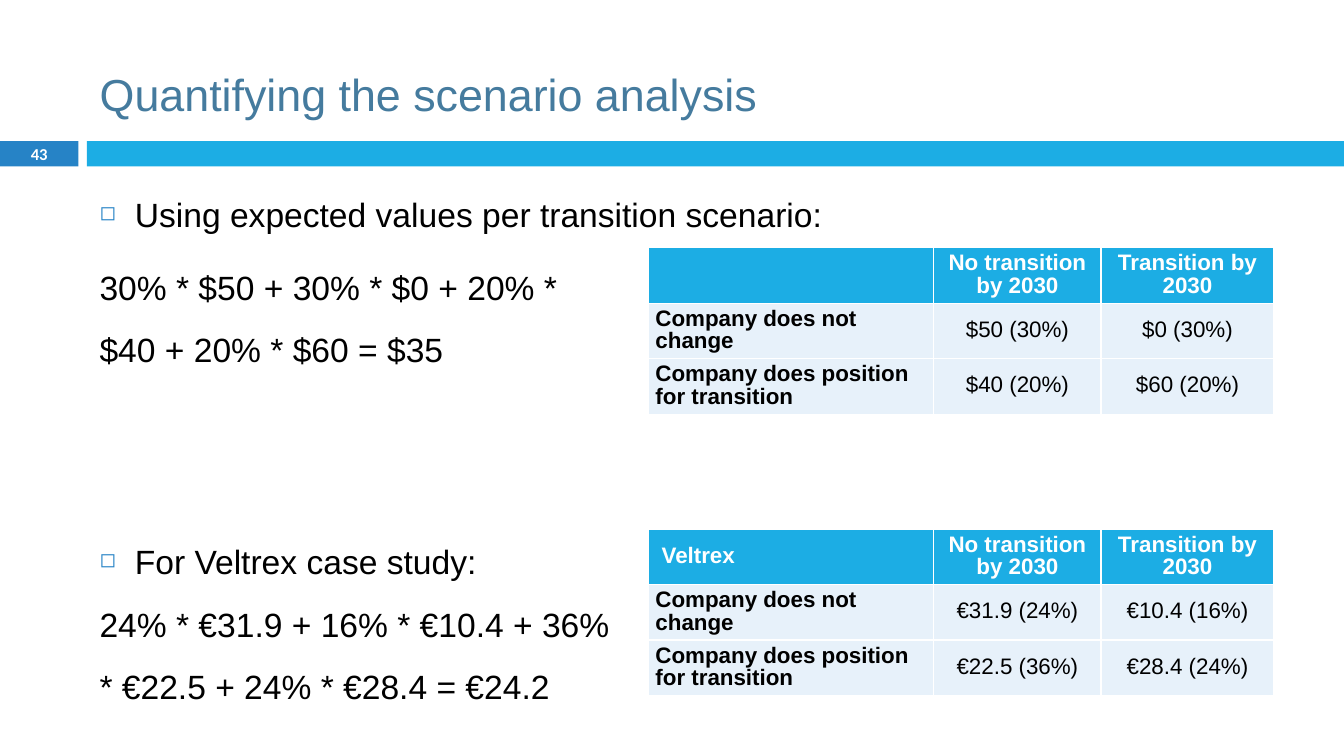
from pptx import Presentation
from pptx.util import Pt
from pptx.dml.color import RGBColor
from pptx.enum.shapes import MSO_SHAPE as Shape
from pptx.enum.text import PP_ALIGN as Align, MSO_ANCHOR as Anchor
from lxml.etree import SubElement

TITLE = "Quantifying the scenario analysis"
NUMBER = "43"
# lines, bulleted, space before
BODY = [
    (["Using expected values per transition scenario:"], True, 0),
    (["30% * $50 + 30% * $0 + 20% *", "$40 + 20% * $60 = $35"], False, 7),
    (["For Veltrex case study:"], True, 107),
    (["24% * €31.9 + 16% * €10.4 + 36%", "* €22.5 + 24% * €28.4 = €24.2"], False, 0),
]
HEADS = ["No transition by 2030", "Transition by 2030"]
SIDES = ["Company does not change", "Company does position for transition"]
# top, corner label, values
TABLES = [
    (177, "", [["$50 (30%)", "$0 (30%)"], ["$40 (20%)", "$60 (20%)"]]),
    (378, "Veltrex", [["€31.9 (24%)", "€10.4 (16%)"], ["€22.5 (36%)", "€28.4 (24%)"]]),
]
COLS = [204, 119.5, 123.5]
ROW = 39.6
SKY, BLUE, PALE = "1CADE4", "2683C6", "E7F1FA"
BLACK, WHITE = "000000", "FFFFFF"


def rgb(code):
    return RGBColor.from_string(code)


def add_run(para, text, size, color, bold=False, face="Arial"):
    run = para.add_run()
    run.text = text
    font = run.font
    font.name, font.size, font.bold = face, Pt(size), bold
    font.color.rgb = rgb(color)


def add_bar(left, width, color):
    bar = slide.shapes.add_shape(Shape.RECTANGLE, Pt(left), Pt(100.8), Pt(width), Pt(18))
    bar.shadow.inherit = False
    bar.fill.solid()
    bar.fill.fore_color.rgb = rgb(color)
    bar.line.fill.background()


def add_box(left, top, width, height):
    box = slide.shapes.add_textbox(Pt(left), Pt(top), Pt(width), Pt(height))
    box.text_frame.word_wrap = True
    return box.text_frame


def set_bullet(para):
    props = para._p.get_or_add_pPr()
    props.set("marL", str(Pt(25.2)))
    props.set("indent", str(-Pt(25.2)))
    space = "{http://schemas.openxmlformats.org/drawingml/2006/main}"
    color = SubElement(props, space + "buClr")
    SubElement(color, space + "srgbClr", val=BLUE)
    SubElement(props, space + "buSzPct", val="60000")
    SubElement(props, space + "buChar", char="◻")


def fill_cell(cell, text, head, side):
    cell.fill.solid()
    cell.fill.fore_color.rgb = rgb(SKY if head else PALE)
    cell.vertical_anchor = Anchor.MIDDLE
    cell.margin_left = Pt(9.6 if head and side else 5.2)
    cell.margin_right = Pt(5.2)
    cell.margin_top = cell.margin_bottom = 0
    para = cell.text_frame.paragraphs[0]
    para.alignment = Align.LEFT if side else Align.CENTER
    para.line_spacing = Pt(16)
    para.space_before = para.space_after = Pt(1)
    if text:
        add_run(para, text, 16, WHITE if head else BLACK, head or side)


def add_grid(top, corner, values):
    rows = [[corner] + HEADS] + [[side] + vals for side, vals in zip(SIDES, values)]
    frame = slide.shapes.add_table(len(rows), len(COLS), Pt(463), Pt(top),
                                   Pt(sum(COLS)), Pt(ROW * len(rows)))
    grid = frame.table
    for col, width in zip(grid.columns, COLS):
        col.width = Pt(width)
    for r, row in enumerate(rows):
        grid.rows[r].height = Pt(ROW)
        for c, text in enumerate(row):
            fill_cell(grid.cell(r, c), text, r == 0, c == 0)


deck = Presentation()
deck.slide_width, deck.slide_height = Pt(960), Pt(540)
slide = deck.slides.add_slide(deck.slide_layouts[5])

add_bar(0, 56, BLUE)
add_bar(62, 898, SKY)

title = slide.shapes.title
title.left, title.top, title.width, title.height = Pt(64), Pt(18), Pt(856), Pt(78)
title.text_frame.vertical_anchor = Anchor.MIDDLE
para = title.text_frame.paragraphs[0]
para.alignment = Align.LEFT
para.line_spacing = 1.5
add_run(para, TITLE, 32, "457B9E")

frame = add_box(0, 100, 56, 19.6)
frame.vertical_anchor = Anchor.MIDDLE
frame.margin_top = frame.margin_bottom = 0
para = frame.paragraphs[0]
para.alignment = Align.CENTER
add_run(para, NUMBER, 11.9, WHITE, True, "Calibri")

frame = add_box(64, 119.5, 818, 388)
for i, (lines, bullet, gap) in enumerate(BODY):
    para = frame.add_paragraph() if i else frame.paragraphs[0]
    para.line_spacing = 1.55
    para.space_before = Pt(gap)
    if bullet:
        set_bullet(para)
    for j, line in enumerate(lines):
        if j:
            para.add_line_break()
        add_run(para, line, 24, BLACK)

for table in TABLES:
    add_grid(*table)

deck.save("out.pptx")
